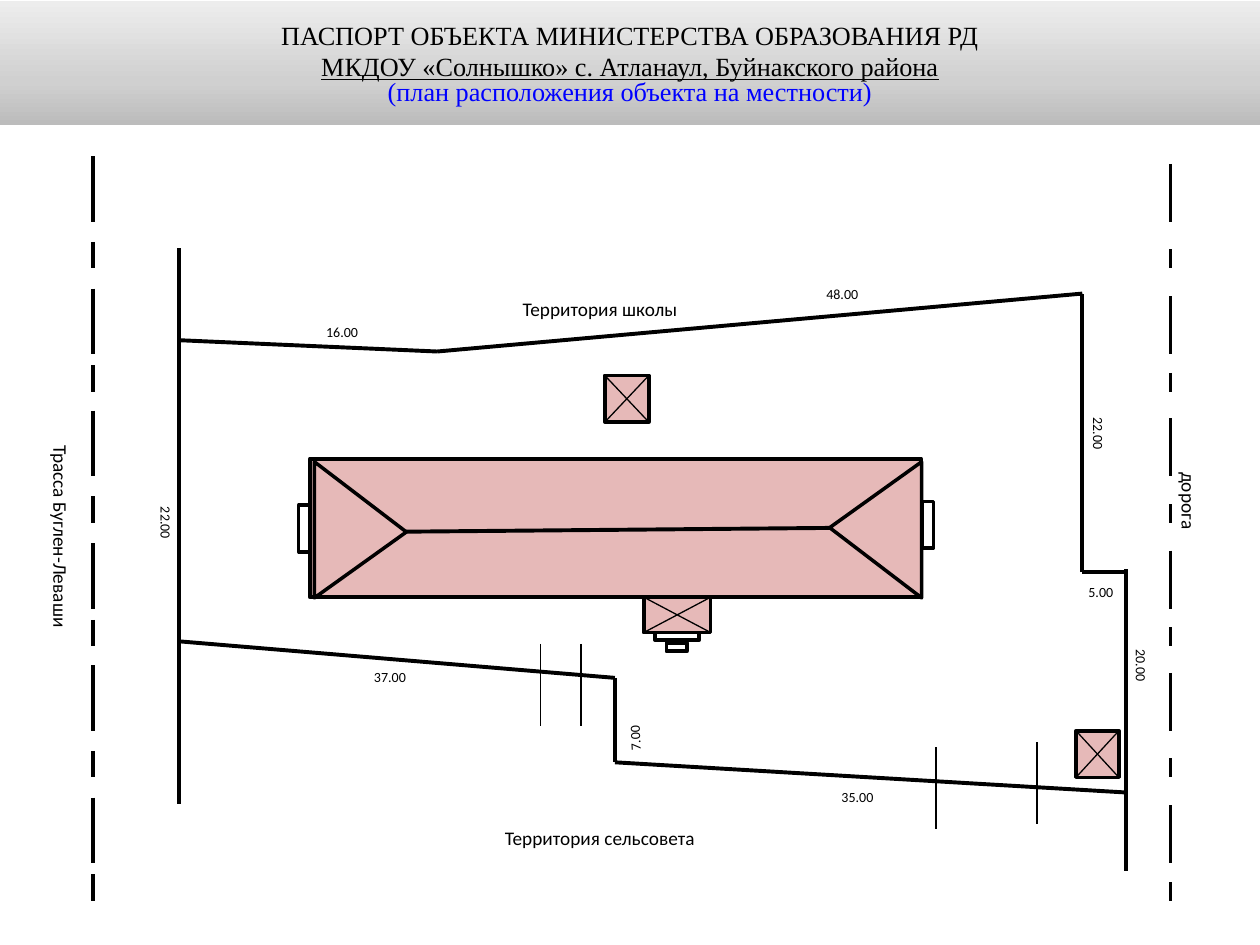
from copy import deepcopy

from pptx import Presentation
from pptx.dml.color import RGBColor
from pptx.enum.shapes import MSO_CONNECTOR as Connector, MSO_SHAPE as Shape
from pptx.enum.text import MSO_ANCHOR as Anchor, MSO_AUTO_SIZE as AutoSize, PP_ALIGN as Align
from pptx.oxml.ns import qn
from pptx.util import Inches, Pt
from lxml.etree import SubElement

BLACK, WHITE, PINK, BLUE = "000000", "FFFFFF", "E6B9B8", "0000FF"

# Content: text, colour, underline, line spacing
TITLE = [
    ("ПАСПОРТ ОБЪЕКТА МИНИСТЕРСТВА ОБРАЗОВАНИЯ РД", BLACK, False, 1.0),
    ("МКДОУ «Солнышко» с. Атланаул, Буйнакского района", BLACK, True, 1.0),
    ("(план расположения объекта на местности)", BLUE, False, 0.8),
]
HEADER_STOPS = [(0, "BCBCBC"), (0.35, "D0D0D0"), (1, "EDEDED")]

# Text, left, top, width, height, rotation
DIMENSIONS = [
    ("35.00", 6.58, 6.21, 0.64, 0.27, 0),
    ("7.00", 4.71, 5.59, 0.67, 0.26, 267.1),
    ("37.00", 2.87, 5.26, 0.64, 0.27, 0),
    ("48.00", 6.46, 2.22, 0.64, 0.27, 0),
    ("16.00", 2.49, 2.52, 0.64, 0.27, 0),
    ("5.00", 8.54, 4.58, 0.64, 0.27, 0),
    ("20.00", 8.72, 5.27, 0.67, 0.24, 90),
    ("22.00", 8.37, 3.42, 0.67, 0.26, 90),
    ("22.00", 0.97, 4.13, 0.67, 0.26, 90),
]
SURROUNDINGS = [
    ("дорога", 8.64, 4.27, 1.56, 0.32, 90),
    ("Территория сельсовета", 3.91, 6.51, 3.27, 0.33, 0),
    ("Территория школы", 4.05, 2.31, 3.27, 0.33, 0),
    ("Трасса Буглен-Леваши", -0.61, 4.35, 2.15, 0.32, 90),
]

# Roads: x and top of each dashed line; one dash pattern repeats downwards
ROADS = [(0.74, 1.24), (0.74, 1.3), (9.29, 1.3)]
DASHES = [(0, 0.46), (0.68, 0.83), (1.05, 1.51), (1.66, 1.81)]
DASH_PERIOD, DASH_REPEATS = 2.02, 3

# Fences: each is a chain of corner points
FENCES = [
    [(8.94, 4.52), (8.94, 6.91)],
    [(8.94, 4.54), (8.59, 4.54), (8.59, 2.33), (3.47, 2.79), (1.42, 2.7)],
    [(1.42, 1.97), (1.42, 6.38)],
    [(1.42, 5.09), (4.88, 5.38), (4.88, 6.05), (8.94, 6.29)],
]
GATES = [(4.29, 5.11), (4.61, 5.11), (7.43, 5.93), (8.23, 5.89)]
GATE_HEIGHT = 0.65

# Buildings: left, top, width, height, fill, line width, crossed roof
BUILDINGS = [
    (2.46, 3.64, 4.85, 1.1, PINK, 2.25, False),
    (5.11, 4.74, 0.53, 0.28, PINK, 2.25, True),
    (5.2, 5.02, 0.35, 0.06, WHITE, 2.25, False),
    (5.29, 5.1, 0.16, 0.07, WHITE, 2.25, False),
    (4.8, 2.98, 0.35, 0.37, PINK, 2, True),
    (8.54, 5.8, 0.34, 0.37, PINK, 2, True),
    (2.37, 4.01, 0.09, 0.37, WHITE, 2, False),
    (7.32, 3.98, 0.09, 0.37, WHITE, 2, False),
]
ROOF_ENDS = [(2.32, 90), (6.41, 270)]
ROOF_RIDGE = [(3.22, 4.22), (6.59, 4.19)]


def colour(hex_string):
    return RGBColor.from_string(hex_string)


def place(*lengths):
    return [Inches(length) for length in lengths]


def add_line(start, end, width=2.25):
    line = slide.shapes.add_connector(Connector.STRAIGHT, *place(*start, *end))
    line.line.color.rgb = colour(BLACK)
    line.line.width = Pt(width)
    SubElement(line._element.spPr, qn("a:effectLst"))


def add_chain(points):
    for start, end in zip(points, points[1:]):
        add_line(start, end)


def add_block(kind, left, top, width, height, fill, line_width):
    block = slide.shapes.add_shape(kind, *place(left, top, width, height))
    block.shadow.inherit = False
    block.fill.solid()
    block.fill.fore_color.rgb = colour(fill)
    block.line.color.rgb = colour(BLACK)
    block.line.width = Pt(line_width)
    return block


def add_cross(left, top, width, height):
    centre = (left + width / 2, top + height / 2)
    for x in (left, left + width):
        for y in (top, top + height):
            add_line((x, y), centre, 0.75)


def add_label(text, left, top, width, height, rotation, size):
    box = slide.shapes.add_textbox(*place(left, top, width, height))
    box.rotation = rotation
    box.text_frame.word_wrap = True
    para = box.text_frame.paragraphs[0]
    para.text = text
    para.font.name = "Calibri"
    para.font.size = Pt(size)
    para.font.color.rgb = colour(BLACK)


def add_header():
    header = slide.shapes.title
    header.left, header.top, header.width, header.height = place(0, 0.01, 10, 0.98)
    header.fill.gradient()
    header.fill.gradient_angle = 90
    first_stop = header._element.spPr.find(".//" + qn("a:gs"))
    first_stop.addnext(deepcopy(first_stop))
    for stop, (position, shade) in zip(header.fill.gradient_stops, HEADER_STOPS):
        stop.position = position
        stop.color.rgb = colour(shade)

    frame = header.text_frame
    frame.auto_size = AutoSize.NONE
    frame.word_wrap = True
    frame.vertical_anchor = Anchor.MIDDLE
    for index, (text, shade, underline, spacing) in enumerate(TITLE):
        para = frame.add_paragraph() if index else frame.paragraphs[0]
        para.text = text
        para.alignment = Align.CENTER
        para.line_spacing = spacing
        para.font.name = "Times New Roman"
        para.font.size = Pt(15)
        para.font.underline = underline
        para.font.color.rgb = colour(shade)


deck = Presentation()
deck.slide_width, deck.slide_height = place(10, 7.5)
slide = deck.slides.add_slide(deck.slide_layouts[5])
add_header()

# Dashed roads on both sides
for x, top in ROADS:
    for repeat in range(DASH_REPEATS):
        offset = top + repeat * DASH_PERIOD
        for start, end in DASHES:
            add_line((x, offset + start), (x, offset + end))

# Fences around the plot
for fence in FENCES:
    add_chain(fence)

# Buildings, then the hipped roof of the main one
for *bounds, fill, line_width, crossed in BUILDINGS:
    add_block(Shape.RECTANGLE, *bounds, fill, line_width)
    if crossed:
        add_cross(*bounds)
for left, rotation in ROOF_ENDS:
    roof = add_block(Shape.ISOSCELES_TRIANGLE, left, 3.84, 1.08, 0.73, PINK, 2)
    roof.rotation = rotation
    roof.adjustments[0] = 0.516
add_chain(ROOF_RIDGE)

# Gates
for x, top in GATES:
    add_line((x, top), (x, top + GATE_HEIGHT), 1)

# Labels
for labels, size in ((DIMENSIONS, 8), (SURROUNDINGS, 11)):
    for label in labels:
        add_label(*label, size)

deck.save("out.pptx")
